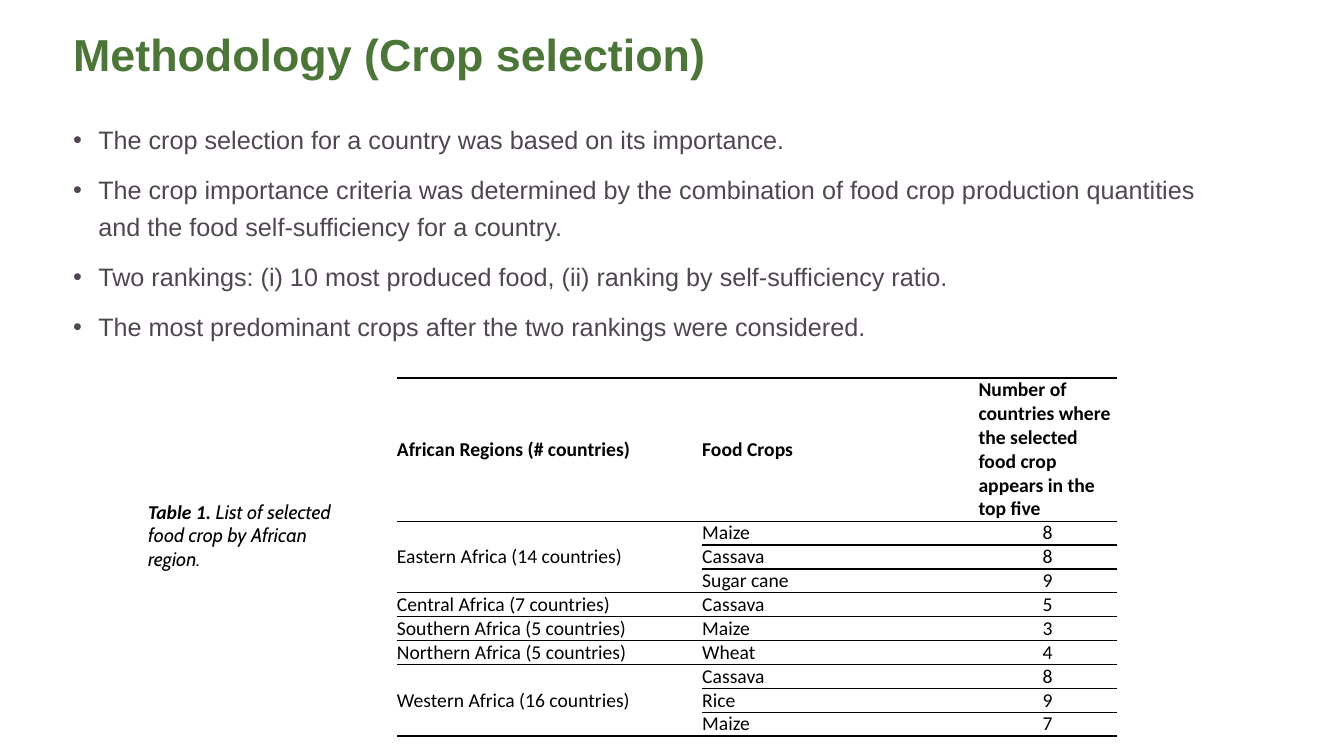
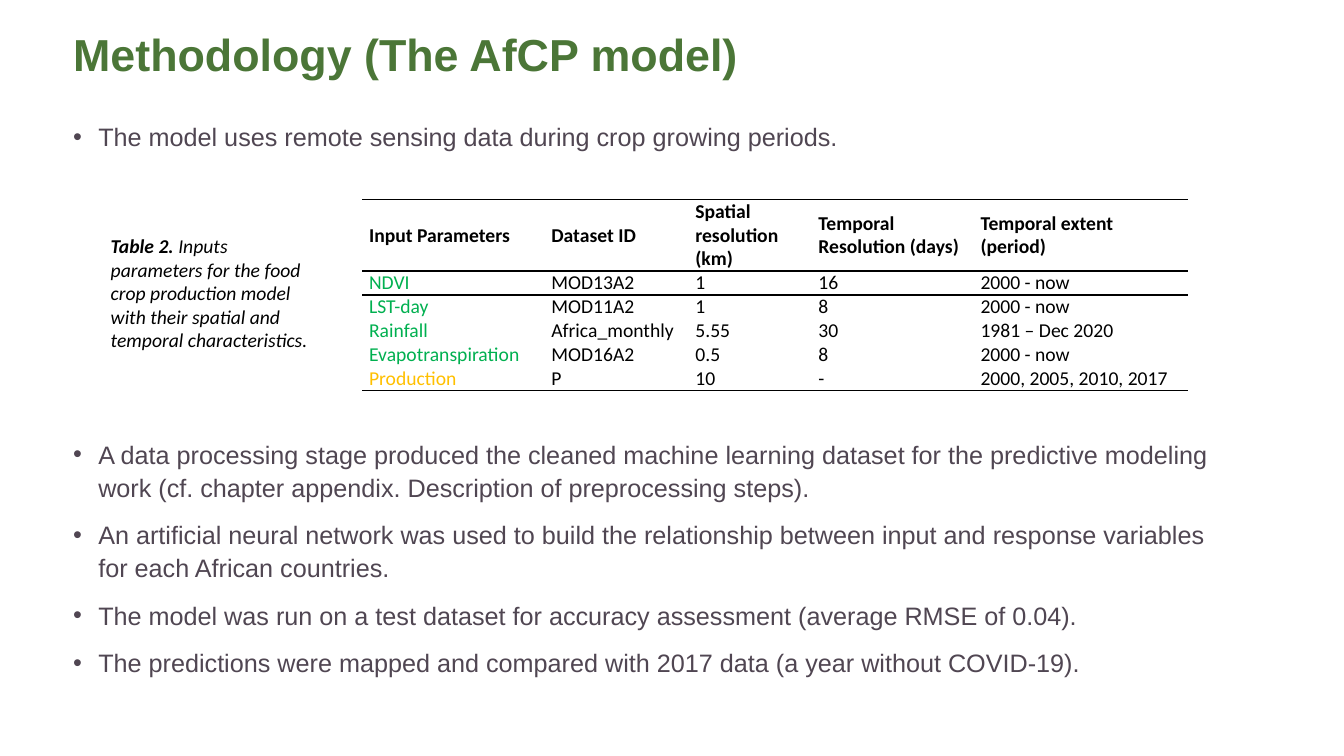
from dataclasses import dataclass

from pptx import Presentation
from pptx.dml.color import RGBColor
from pptx.enum.text import MSO_ANCHOR, MSO_AUTO_SIZE, PP_ALIGN
from pptx.oxml import parse_xml
from pptx.oxml.ns import nsdecls, qn
from pptx.util import Inches, Pt

COLUMNS, ROWS = 32, 18
UNIT = Inches(7.5) // ROWS
PLAIN_TABLE = "{2D5ABB26-0587-4C30-8999-92F81FD0307C}"


@dataclass(frozen=True)
class Theme:
    """Colours, fonts and type sizes shared by the slides."""

    title: str = "4B7637"
    body: str = "504652"
    ink: str = "000000"
    predictor: str = "00B050"
    response: str = "FFC000"
    main_font: str = "Arial"
    table_font: str = "Calibri"
    caption_font: str = "Cabin"
    title_size: float = 32
    body_size: float = 18
    table_size: float = 14
    thick_rule: float = 1.5
    thin_rule: float = 1


THEME = Theme()

CROP_HEADER = [
    "African Regions (# countries)",
    "Food Crops",
    "Number of countries where the selected food crop appears in the top five",
]
CROPS_BY_REGION = [
    ("Eastern Africa (14 countries)", [("Maize", "8"), ("Cassava", "8"), ("Sugar cane", "9")]),
    ("Central Africa (7 countries)", [("Cassava", "5")]),
    ("Southern Africa (5 countries)", [("Maize", "3")]),
    ("Northern Africa (5 countries)", [("Wheat", "4")]),
    ("Western Africa (16 countries)", [("Cassava", "8"), ("Rice", "9"), ("Maize", "7")]),
]
INPUT_ROWS = [
    ["Input Parameters", "Dataset ID", "Spatial resolution (km)",
     "Temporal Resolution (days)", "Temporal extent (period)"],
    ["NDVI", "MOD13A2", "1", "16", "2000 - now"],
    ["LST-day", "MOD11A2", "1", "8", "2000 - now"],
    ["Rainfall", "Africa_monthly", "5.55", "30", "1981 – Dec 2020"],
    ["Evapotranspiration", "MOD16A2", "0.5", "8", "2000 - now"],
    ["Production", "P", "10", "-", "2000, 2005, 2010, 2017"],
]


def grid(*cells):
    """Turn grid units into lengths."""
    return [round(cell * UNIT) for cell in cells]


def style_runs(paragraph, font, size, color, bold=False, italic=False):
    """Format every run of a paragraph."""
    for run in paragraph.runs:
        run.font.name = font
        run.font.size = Pt(size)
        run.font.bold = bold
        run.font.italic = italic
        run.font.color.rgb = RGBColor.from_string(color)


def place(shape, left, top, width, height):
    """Move a shape to a grid area."""
    shape.left, shape.top, shape.width, shape.height = grid(left, top, width, height)


def add_content_slide(presentation, title, bullets, line_spacing, gaps):
    """Add a slide with a title and a bulleted body."""
    slide = presentation.slides.add_slide(presentation.slide_layouts[1])
    heading, body = slide.shapes.title, slide.placeholders[1]
    place(heading, 1.5, 0.3, 22.25, 2.1)
    place(body, 1.5, 2.7, 27.6, 14.1)
    for shape in (heading, body):
        shape.text_frame.auto_size = MSO_AUTO_SIZE.NONE

    heading.text_frame.text = title
    heading.text_frame.vertical_anchor = MSO_ANCHOR.MIDDLE
    paragraph = heading.text_frame.paragraphs[0]
    paragraph.alignment = PP_ALIGN.LEFT
    paragraph.line_spacing = 0.9
    style_runs(paragraph, THEME.main_font, THEME.title_size, THEME.title, bold=True)

    body.text_frame.text = "\n".join(bullets)
    for paragraph, gap in zip(body.text_frame.paragraphs, gaps):
        properties = paragraph._p.get_or_add_pPr()
        properties.set("marL", str(Inches(0.25)))
        properties.set("indent", str(-Inches(0.25)))
        paragraph.line_spacing = line_spacing
        paragraph.space_before = Pt(gap)
        style_runs(paragraph, THEME.main_font, THEME.body_size, THEME.body)
    return slide


def add_caption(slide, area, label, text, font):
    """Add an italic table caption with a bold label."""
    box = slide.shapes.add_textbox(*grid(*area))
    box.text_frame.word_wrap = True
    paragraph = box.text_frame.paragraphs[0]
    paragraph.add_run().text = label + " "
    style_runs(paragraph, THEME.table_font, THEME.table_size, THEME.ink, bold=True, italic=True)
    run = paragraph.add_run()
    run.text = text
    run.font.name = font
    run.font.size = Pt(THEME.table_size)
    run.font.italic = True
    run.font.color.rgb = RGBColor.from_string(THEME.ink)


def rule_cell(cell, top=None, bottom=None):
    """Draw the horizontal rules of a cell and clear its fill."""
    properties = cell._tc.get_or_add_tcPr()
    for tag, width in (("lnT", top), ("lnB", bottom)):
        if width:
            properties.append(parse_xml(
                f'<a:{tag} {nsdecls("a")} w="{Pt(width)}"><a:solidFill>'
                f'<a:srgbClr val="{THEME.ink}"/></a:solidFill></a:{tag}>'))
    cell.fill.background()


def add_plain_table(slide, left, top, widths, header_height, rows, inset):
    """Add an unstyled table with a bold first row."""
    row_height = 0.55
    height = header_height + row_height * (len(rows) - 1)
    frame = slide.shapes.add_table(
        len(rows), len(widths), *grid(left, top, sum(widths), height))
    table = frame.table
    table.horz_banding = table.first_row = False
    table._tbl.tblPr.find(qn("a:tableStyleId")).text = PLAIN_TABLE
    for column, width in zip(table.columns, grid(*widths)):
        column.width = width
    for index, (row, texts) in enumerate(zip(table.rows, rows)):
        row.height = grid(row_height if index else header_height)[0]
        for cell, text in zip(row.cells, texts):
            cell.text_frame.text = text
            cell.vertical_anchor = MSO_ANCHOR.MIDDLE
            cell.margin_left = cell.margin_right = Inches(inset)
            cell.margin_top = cell.margin_bottom = 0
            style_runs(cell.text_frame.paragraphs[0], THEME.table_font,
                       THEME.table_size, THEME.ink, bold=index == 0)
    return table


def add_crop_table(slide):
    """Add the table of crops, one merged cell for each region."""
    rows = [CROP_HEADER]
    for region, crops in CROPS_BY_REGION:
        for index, (crop, count) in enumerate(crops):
            rows.append(["" if index else region, crop, count])
    table = add_plain_table(slide, 9.45, 9, [7.27, 6.58, 3.29], 3.4, rows, 0)
    last = len(rows) - 1

    for index, row in enumerate(table.rows):
        top = THEME.thin_rule if index else THEME.thick_rule
        bottom = THEME.thick_rule if index == last else THEME.thin_rule
        for cell in list(row.cells)[1 if index else 0:]:
            rule_cell(cell, top, bottom)
        if index:
            table.cell(index, 2).text_frame.paragraphs[0].alignment = PP_ALIGN.CENTER

    first = 1
    for region, crops in CROPS_BY_REGION:
        final = first + len(crops) - 1
        bottom = THEME.thick_rule if final == last else THEME.thin_rule
        for index in range(first, final + 1):
            rule_cell(table.cell(index, 0),
                      THEME.thin_rule if index == first else None,
                      bottom if index in (first, final) else None)
        if final > first:
            table.cell(first, 0).merge(table.cell(final, 0))
        first = final + 1


def add_input_table(slide):
    """Add the table of model inputs with coloured parameter names."""
    table = add_plain_table(slide, 8.62, 4.75, [4.34, 3.43, 2.93, 3.86, 5.11],
                            1.7, INPUT_ROWS, 0.07)
    last = len(INPUT_ROWS) - 1
    rules = {0: (THEME.thick_rule, THEME.thin_rule),
             1: (THEME.thin_rule, None),
             last: (None, THEME.thick_rule)}
    for index, row in enumerate(table.rows):
        for cell in row.cells:
            rule_cell(cell, *rules.get(index, (None, None)))
        if index:
            color = THEME.response if index == last else THEME.predictor
            style_runs(row.cells[0].text_frame.paragraphs[0],
                       THEME.table_font, THEME.table_size, color)


def main():
    """Build and save the presentation."""
    presentation = Presentation()
    presentation.slide_width, presentation.slide_height = grid(COLUMNS, ROWS)

    slide = add_content_slide(presentation, "Methodology (Crop selection)", [
        "The crop selection for a country was based on its importance.",
        "The crop importance criteria was determined by the combination of food crop "
        "production quantities and the food self-sufficiency for a country.",
        "Two rankings: (i) 10 most produced food, (ii) ranking by self-sufficiency ratio.",
        "The most predominant crops after the two rankings were considered.",
    ], 1.2, [0, 10, 10, 10])
    add_crop_table(slide)
    add_caption(slide, (3.29, 11.78, 5.33, 1.94), "Table 1.",
                "List of selected food crop by African region.", THEME.caption_font)

    slide = add_content_slide(presentation, "Methodology (The AfCP model)", [
        "The model uses remote sensing data during crop growing periods.",
        "A data processing stage produced the cleaned machine learning dataset for the "
        "predictive modeling work (cf. chapter appendix. Description of preprocessing steps).",
        "An artificial neural network was used to build the relationship between input "
        "and response variables for each African countries.",
        "The model was run on a test dataset for accuracy assessment (average RMSE of 0.04).",
        "The predictions were mapped and compared with 2017 data (a year without COVID-19).",
    ], 1.1, [0, 203, 10, 10, 10])
    add_input_table(slide)
    add_caption(slide, (2.4, 5.45, 5.33, 3.07), "Table 2.",
                "Inputs parameters for the food crop production model with their "
                "spatial and temporal characteristics.", THEME.table_font)

    presentation.save("out.pptx")


if __name__ == "__main__":
    main()
